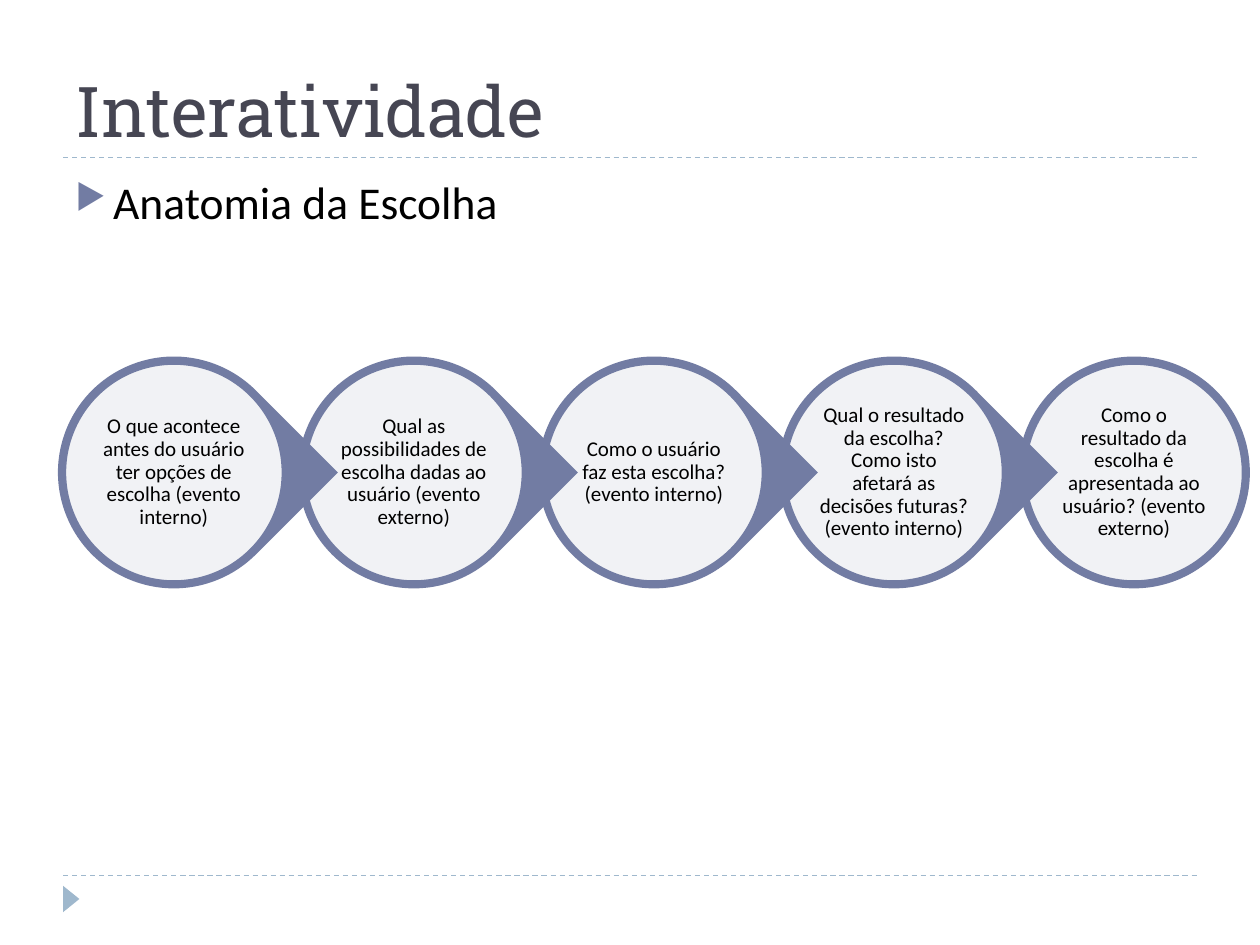
from lxml import etree
from pptx import Presentation
from pptx.dml.color import RGBColor
from pptx.enum.dml import MSO_LINE
from pptx.enum.shapes import MSO_CONNECTOR, MSO_SHAPE
from pptx.enum.text import MSO_ANCHOR, PP_ALIGN
from pptx.oxml.ns import qn
from pptx.util import Inches, Pt

STRAIGHT = MSO_CONNECTOR.STRAIGHT
DASH = MSO_LINE.DASH
TRIANGLE = MSO_SHAPE.ISOSCELES_TRIANGLE
OVAL, TEAR = MSO_SHAPE.OVAL, MSO_SHAPE.TEAR
TOP, MIDDLE, BOTTOM = MSO_ANCHOR.TOP, MSO_ANCHOR.MIDDLE, MSO_ANCHOR.BOTTOM

COLORS = {"title": "464653", "text": "000000", "accent": "727CA3",
          "rule": "9FB8CD", "disc": "FFFFFF"}
STEPS = [
    "O que acontece antes do usuário ter opções de escolha (evento interno)",
    "Qual as possibilidades de escolha dadas ao usuário (evento externo)",
    "Como o usuário faz esta escolha? (evento interno)",
    "Qual o resultado da escolha? Como isto afetará as decisões futuras? (evento interno)",
    "Como o resultado da escolha é apresentada ao usuário? (evento externo)",
]
LEFT, PITCH = 0.46, 7.62 / 4
CENTER_X, CENTER_Y = LEFT + 0.92, 3.75
OUTER, INNER, LABEL = 1.84, 1.72, 1.23

prs = Presentation()
prs.slide_width, prs.slide_height = Inches(10), Inches(7.5)
slide = prs.slides.add_slide(prs.slide_layouts[6])


def add_shape(kind, x, y, w, h, color):
    sp = slide.shapes.add_shape(kind, Inches(x), Inches(y), Inches(w), Inches(h))
    sp.shadow.inherit = False
    sp.fill.solid()
    sp.fill.fore_color.rgb = RGBColor.from_string(COLORS[color])
    sp.line.fill.background()
    return sp


def add_text(text, x, y, w, h, size, font, color, anchor):
    sp = slide.shapes.add_textbox(Inches(x), Inches(y), Inches(w), Inches(h))
    tf = sp.text_frame
    tf.word_wrap = True
    tf.vertical_anchor = anchor
    tf.text = text
    r = tf.paragraphs[0].runs[0]
    r.font.size = Pt(size)
    r.font.name = font
    r.font.color.rgb = RGBColor.from_string(COLORS[color])
    return tf


for y in (6.95, 1.25):
    line = slide.shapes.add_connector(STRAIGHT, Inches(0.5), Inches(y), Inches(9.5), Inches(y))
    line.line.color.rgb = RGBColor.from_string(COLORS["rule"])
    line.line.width = Pt(0.75)
    line.line.dash_style = DASH
    etree.SubElement(line._element.spPr, qn("a:effectLst"))

marker = add_shape(TRIANGLE, 0.46, 7.07, 0.21, 0.13, "rule")
marker.rotation = 90

add_text("Interatividade", 0.5, 0.17, 9, 1.08, 40, "Roboto Slab", "title", BOTTOM)

tf = add_text("Anatomia da Escolha", 0.5, 1.33, 9, 5.4, 26, "Calibri", "text", TOP)
p = tf.paragraphs[0]
p.space_before = Pt(6)
pPr = p._p.get_or_add_pPr()
pPr.set("marL", str(Inches(0.3)))
pPr.set("indent", str(-Inches(0.3)))
bullet_color = etree.SubElement(pPr, qn("a:buClr"))
etree.SubElement(bullet_color, qn("a:srgbClr"), val=COLORS["accent"])
etree.SubElement(pPr, qn("a:buSzPct"), val="76000")
etree.SubElement(pPr, qn("a:buChar"), char="▶")

for i, step in reversed(list(enumerate(STEPS))):
    cx = CENTER_X + i * PITCH
    is_last = i == len(STEPS) - 1
    ring = add_shape(OVAL if is_last else TEAR, cx - OUTER / 2, CENTER_Y - OUTER / 2,
                     OUTER, OUTER, "accent")
    if not is_last:
        ring.rotation = 45
        ring.adjustments[0] = 1

    disc = add_shape(OVAL, cx - INNER / 2, CENTER_Y - INNER / 2, INNER, INNER, "disc")
    disc.line.color.rgb = RGBColor.from_string(COLORS["accent"])
    disc.line.width = Pt(0.75)
    fill = disc._element.spPr.find(qn("a:solidFill"))
    etree.SubElement(fill[0], qn("a:alpha"), val="90000")

    tf = add_text(step, cx - LABEL / 2, CENTER_Y - LABEL / 2, LABEL, LABEL,
                  12, "Calibri", "text", MIDDLE)
    tf.margin_left = tf.margin_right = tf.margin_top = tf.margin_bottom = Inches(0.02)
    p = tf.paragraphs[0]
    p.alignment = PP_ALIGN.CENTER
    p.line_spacing = 0.9

prs.save("out.pptx")
